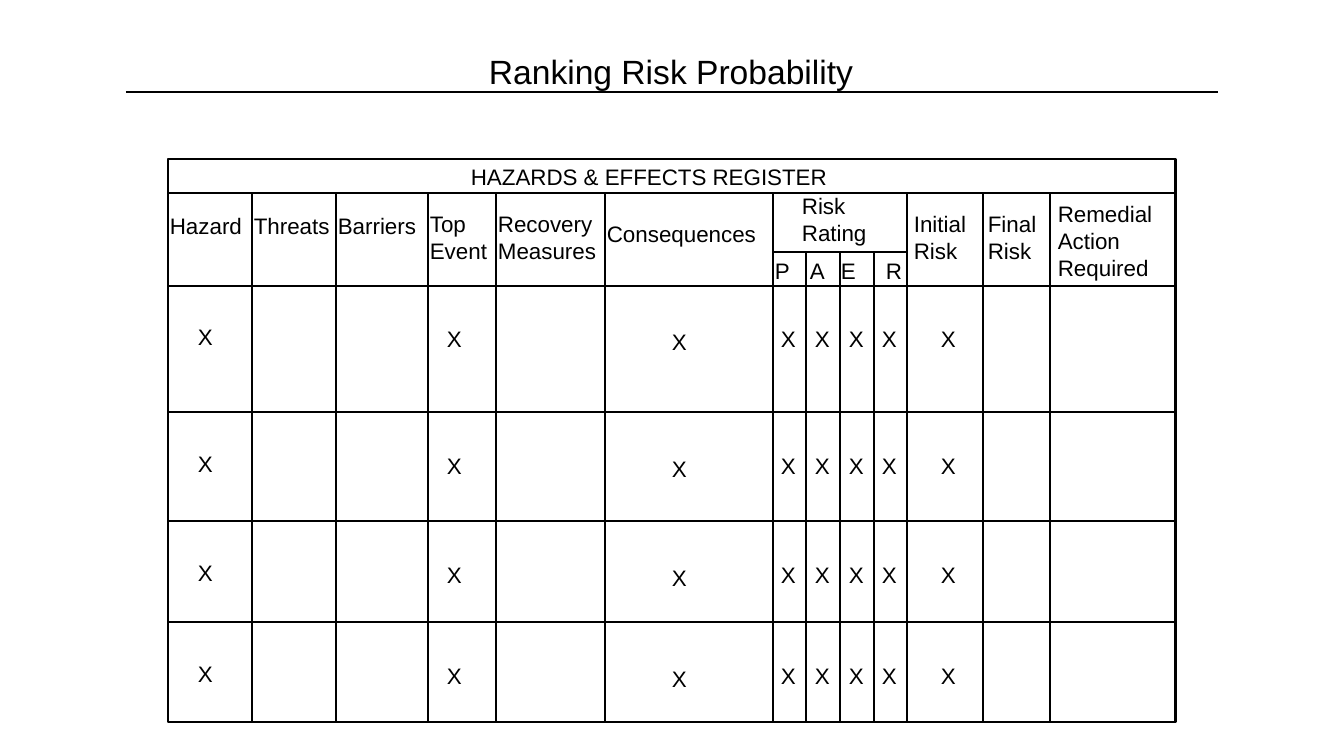
import pptx
import pptx.dml.color
import pptx.enum.shapes
import pptx.enum.text
import pptx.oxml.ns
import pptx.util
import lxml.etree

PX = 914400 / 100.8
COLORS = {"ink": "000000"}
INK = pptx.dml.color.RGBColor.from_string(COLORS["ink"])
RULE_WIDTH = pptx.util.Pt(2)


def add_text(shapes, text, left, top, width, height=37, size=16, wrap=False):
    """Add a text box; each line of text becomes a paragraph."""
    box = shapes.add_textbox(*(round(n * PX) for n in (left, top, width, height)))
    frame = box.text_frame
    frame.word_wrap = wrap
    frame.auto_size = pptx.enum.text.MSO_AUTO_SIZE.SHAPE_TO_FIT_TEXT
    frame.text = text
    for para in frame.paragraphs:
        for span in para.runs:
            span.font.name = "Arial"
            span.font.size = pptx.util.Pt(size)
            span.font.color.rgb = INK


def add_rule(shapes, x1, y1, x2, y2):
    rule = shapes.add_connector(
        pptx.enum.shapes.MSO_CONNECTOR.STRAIGHT,
        *(round(n * PX) for n in (x1, y1, x2, y2)))
    rule.line.color.rgb = INK
    rule.line.width = RULE_WIDTH
    lxml.etree.SubElement(rule._element.spPr, pptx.oxml.ns.qn("a:effectLst"))


deck = pptx.Presentation()
deck.slide_width = round(1344 * PX)
deck.slide_height = round(756 * PX)
page = deck.slides.add_slide(deck.slide_layouts[6])
shapes = page.shapes

# Title
add_rule(shapes, 126, 92, 1218, 92)
add_text(shapes, "Ranking Risk Probability", 479, 46, 389, height=51, size=24)

# Register frame and grid
LEFT, TOP, RIGHT, BOTTOM = 168, 159, 1176, 722
HEADER_TOP, RATING_TOP = 193, 252
RATING_LEFT, RATING_RIGHT = 773, 907

register = shapes.add_shape(
    pptx.enum.shapes.MSO_SHAPE.RECTANGLE,
    *(round(n * PX) for n in (LEFT, TOP, RIGHT - LEFT, BOTTOM - TOP)))
register.shadow.inherit = False
register.fill.background()
register.line.color.rgb = INK
register.line.width = RULE_WIDTH

for y in (HEADER_TOP, 286, 412, 521, 622):
    add_rule(shapes, LEFT, y, RIGHT, y)
for x in (252, 336, 428, 496, 605, RATING_LEFT, RATING_RIGHT, 983, 1050):
    add_rule(shapes, x, HEADER_TOP, x, BOTTOM)
add_rule(shapes, RATING_LEFT, RATING_TOP, RATING_RIGHT, RATING_TOP)
for x in (806, 840, 874):
    add_rule(shapes, x, RATING_TOP, x, BOTTOM)

# Headings
add_text(shapes, "HAZARDS & EFFECTS REGISTER", 461, 158, 380)
for text, left, top, width in (
    ("Hazard", 160, 207, 95),
    ("Threats", 244, 207, 97),
    ("Barriers", 328, 207, 100),
    ("Consequences", 597, 215, 171),
):
    add_text(shapes, text, left, top, width)
for text, left, top, width in (
    ("Top\nEvent", 420, 205, 82),
    ("Risk\nRating", 792, 187, 86),
    ("Initial\nRisk", 904, 205, 74),
    ("Final\nRisk", 978, 205, 70),
):
    add_text(shapes, text, left, top, width, height=64)
add_text(shapes, "Recovery\nMeasures", 488, 205, 134, height=64, wrap=True)
add_text(shapes, "Remedial\nAction\nRequired", 1048, 195, 120, height=91)

ratings = shapes.add_group_shape()
for letter, left in (("P", 765), ("A", 800), ("E", 831), ("R", 876)):
    add_text(ratings.shapes, letter, left, RATING_TOP, 36)

# Marks: column left edge and its vertical shift from the row's mark line
for left, shift in ((188, -2), (437, 0), (662, 3), (771, 0),
                    (805, 0), (839, 0), (872, 0), (931, 0)):
    marks = shapes.add_group_shape()
    for top in (320, 447, 556, 657):
        add_text(marks.shapes, "X", left, top + shift, 35)

deck.save("out.pptx")
